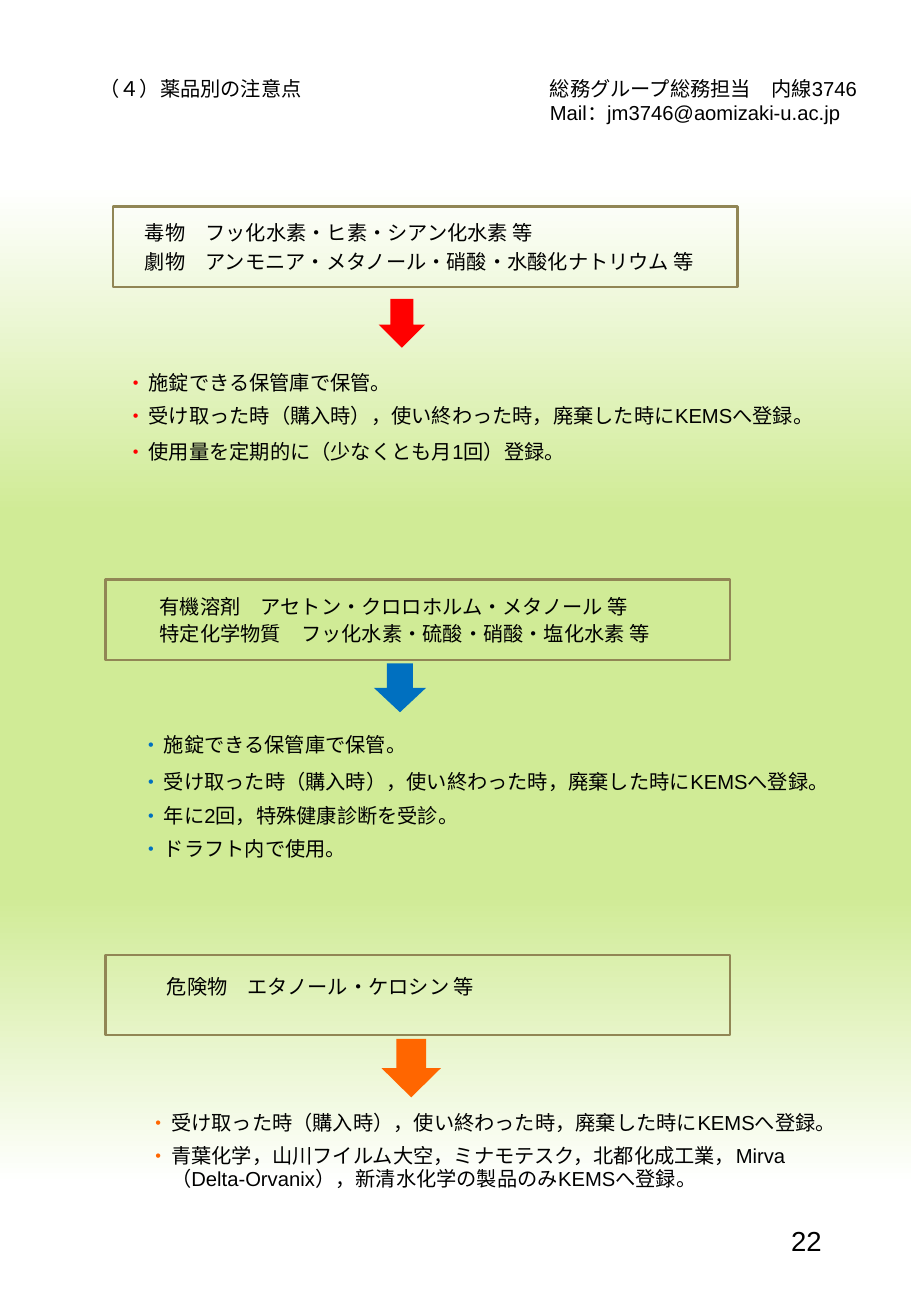
from dataclasses import dataclass

from lxml.etree import SubElement
from pptx import Presentation
from pptx.dml.color import RGBColor
from pptx.enum.shapes import MSO_SHAPE
from pptx.enum.text import MSO_ANCHOR, PP_ALIGN
from pptx.oxml.ns import qn
from pptx.shapes.autoshape import Shape
from pptx.slide import Slide
from pptx.text.text import TextFrame
from pptx.util import Cm, Pt

FONT = "Arial"
BLACK = "000000"
FRAME = "918655"
STOPS = [(14, "FFFFFF"), (39, "D0EB96"), (68, "D0EB96"), (90, "FFFFFF")]
LOCK = "施錠できる保管庫で保管。"
LOG = "受け取った時（購入時），使い終わった時，廃棄した時にKEMSへ登録。"


@dataclass
class Area:
    left: float
    top: float
    width: float
    height: float

    def cm(self) -> tuple[int, int, int, int]:
        return Cm(self.left), Cm(self.top), Cm(self.width), Cm(self.height)


@dataclass
class Label:
    area: Area
    lines: list[str]
    size: float = 12
    align: PP_ALIGN = PP_ALIGN.LEFT
    anchor: MSO_ANCHOR = MSO_ANCHOR.TOP


@dataclass
class Group:
    hue: str
    box: Area
    inset: tuple[float, float]
    names: list[str]
    lead: float
    arrow: Area
    notes: Area
    rules: list[str]
    gaps: list[float]


LABELS = [
    Label(Area(1.83, 1.47, 8, 1), ["（４）薬品別の注意点"]),
    Label(Area(11.25, 1.47, 7.29, 1.27),
          ["総務グループ総務担当　内線3746", "Mail：jm3746@aomizaki-u.ac.jp"]),
    Label(Area(16.13, 25.2, 1.47, 1.47), ["22"], 16.3,
          PP_ALIGN.CENTER, MSO_ANCHOR.MIDDLE),
]

GROUPS = [
    Group("FF0000", Area(2.36, 4.32, 13.06, 1.68), (0.67, 0.29),
          ["毒物　フッ化水素・ヒ素・シアン化水素 等",
           "劇物　アンモニア・メタノール・硝酸・水酸化ナトリウム 等"], 2.8,
          Area(7.92, 6.25, 0.97, 1.02), Area(2.78, 7.77, 14.75, 2.2),
          [LOCK, LOG, "使用量を定期的に（少なくとも月1回）登録。"],
          [0, 5.9, 7.6]),
    Group("0070C0", Area(2.21, 12.12, 13.06, 1.68), (1.13, 0.31),
          ["有機溶剤　アセトン・クロロホルム・メタノール 等",
           "特定化学物質　フッ化水素・硫酸・硝酸・塩化水素 等"], 1.4,
          Area(7.82, 13.87, 1.09, 1.02), Area(3.1, 15.34, 14.48, 3.1),
          [LOCK, LOG, "年に2回，特殊健康診断を受診。", "ドラフト内で使用。"],
          [0, 8.2, 6.5, 5.9]),
    Group("FF6600", Area(2.21, 19.96, 13.06, 1.68), (1.28, 0.41),
          ["危険物　エタノール・ケロシン 等"], 0,
          Area(7.98, 21.72, 1.24, 1.22), Area(3.25, 23.24, 13.82, 2.4),
          [LOG, "青葉化学，山川フイルム大空，ミナモテスク，北都化成工業，Mirva"
                "（Delta-Orvanix），新清水化学の製品のみKEMSへ登録。"],
          [0, 5.9]),
]


def tint(code: str) -> RGBColor:
    return RGBColor.from_string(code)


def write(frame: TextFrame, lines: list[str], size: float = 12) -> None:
    frame.word_wrap = True
    frame.text = "\n".join(lines)
    for para in frame.paragraphs:
        para.alignment = PP_ALIGN.LEFT
        for run in para.runs:
            run.font.name = FONT
            run.font.size = Pt(size)
            run.font.color.rgb = tint(BLACK)


def inset(frame: TextFrame, left: float = 0, top: float = 0) -> None:
    frame.margin_left, frame.margin_top = Cm(left), Cm(top)
    frame.margin_right = frame.margin_bottom = 0


def paint(slide: Slide) -> None:
    fill = slide.background.fill
    fill.gradient()
    fill.gradient_angle = 270
    stops = next(slide.element.iter(qn("a:gsLst")))
    for stop in list(stops):
        stops.remove(stop)
    for place, code in STOPS:
        stop = SubElement(stops, qn("a:gs"), pos=str(place * 1000))
        SubElement(stop, qn("a:srgbClr"), val=code)


def add_label(slide: Slide, label: Label) -> None:
    frame = slide.shapes.add_textbox(*label.area.cm()).text_frame
    write(frame, label.lines, label.size)
    frame.vertical_anchor = label.anchor
    for para in frame.paragraphs:
        para.alignment = label.align


def add_form(slide: Slide, kind: MSO_SHAPE, area: Area) -> Shape:
    form = slide.shapes.add_shape(kind, *area.cm())
    form.shadow.inherit = False
    return form


def add_box(slide: Slide, group: Group) -> None:
    box = add_form(slide, MSO_SHAPE.RECTANGLE, group.box)
    box.fill.background()
    box.line.color.rgb = tint(FRAME)
    box.line.width = Pt(1.5)
    frame = box.text_frame
    write(frame, group.names)
    inset(frame, *group.inset)
    frame.vertical_anchor = MSO_ANCHOR.TOP
    for para in frame.paragraphs[1:]:
        para.space_before = Pt(group.lead)


def add_arrow(slide: Slide, group: Group) -> None:
    arrow = add_form(slide, MSO_SHAPE.DOWN_ARROW, group.arrow)
    arrow.fill.solid()
    arrow.fill.fore_color.rgb = tint(group.hue)
    arrow.line.fill.background()


def add_rules(slide: Slide, group: Group) -> None:
    frame = slide.shapes.add_textbox(*group.notes.cm()).text_frame
    write(frame, group.rules)
    inset(frame)
    for para, gap in zip(frame.paragraphs, group.gaps):
        para.line_spacing = Pt(13.7)
        para.space_before = Pt(gap)
        props = para._p.get_or_add_pPr()
        props.set("marL", str(Cm(0.33)))
        props.set("indent", str(-Cm(0.33)))
        shade = SubElement(props, qn("a:buClr"))
        SubElement(shade, qn("a:srgbClr"), val=group.hue)
        SubElement(props, qn("a:buSzPct"), val="80000")
        SubElement(props, qn("a:buFont"), typeface=FONT)
        SubElement(props, qn("a:buChar"), char="•")


def main() -> None:
    deck = Presentation()
    deck.slide_width, deck.slide_height = Cm(19.05), Cm(27.51)
    slide = deck.slides.add_slide(deck.slide_layouts[6])
    paint(slide)
    for label in LABELS:
        add_label(slide, label)
    for group in GROUPS:
        add_box(slide, group)
        add_arrow(slide, group)
        add_rules(slide, group)
    deck.save("out.pptx")


if __name__ == "__main__":
    main()
